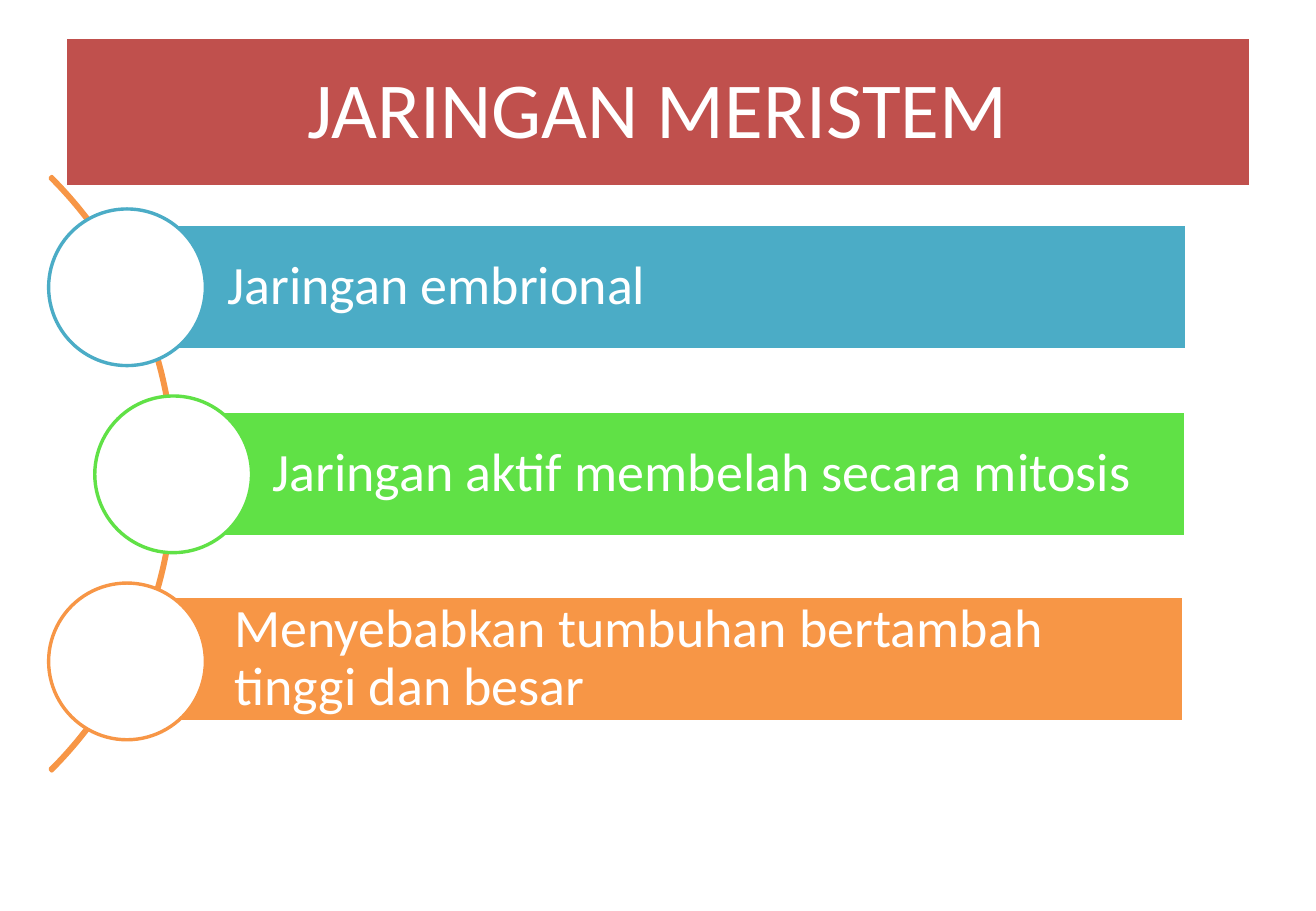
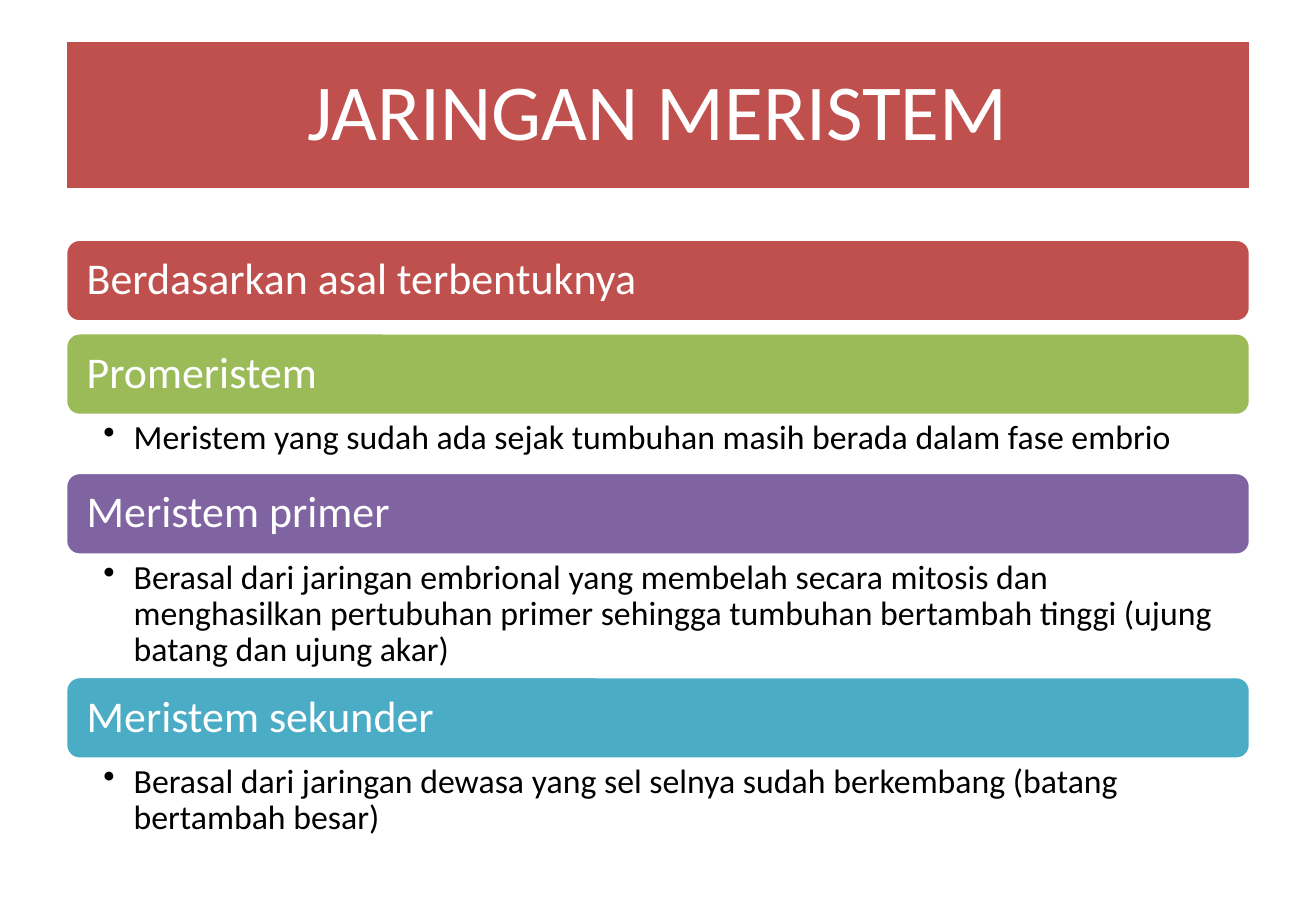
import pptx
import pptx.util
import pptx.dml.color
import pptx.enum.shapes
import pptx.enum.text
import pptx.oxml
import pptx.oxml.ns

Inches = pptx.util.Inches
Pt = pptx.util.Pt
SHAPE = pptx.enum.shapes.MSO_SHAPE
ALIGN = pptx.enum.text.PP_ALIGN
ANCHOR = pptx.enum.text.MSO_ANCHOR

COLORS = {
    "white": "FFFFFF", "black": "000000", "red": "C0504D", "teal": "4BACC6",
    "lime": "60E146", "orange": "F79646", "olive": "9BBB59", "purple": "8064A2",
}
FONT = "Calibri"
LEFT, WIDTH = 0.54, 9.75


def paint(shape, fill, line):
    """Give a shape a solid fill (or none) and a 2 pt outline."""
    if fill:
        shape.fill.solid()
        shape.fill.fore_color.rgb = pptx.dml.color.RGBColor.from_string(COLORS[fill])
    else:
        shape.fill.background()
    shape.line.color.rgb = pptx.dml.color.RGBColor.from_string(COLORS[line])
    shape.line.width = Pt(2)
    shape.shadow.inherit = False


def write(shape, text, size, insets, color="white", align=ALIGN.LEFT, anchor=ANCHOR.MIDDLE):
    """Write one paragraph; insets run left, top, right, bottom."""
    frame = shape.text_frame
    frame.word_wrap = True
    frame.auto_size = pptx.enum.text.MSO_AUTO_SIZE.NONE
    frame.vertical_anchor = anchor
    (frame.margin_left, frame.margin_top,
     frame.margin_right, frame.margin_bottom) = map(Inches, insets)
    paragraph = frame.paragraphs[0]
    paragraph.alignment = align
    paragraph.line_spacing = 0.9
    run = paragraph.add_run()
    run.text = text
    run.font.name = FONT
    run.font.size = Pt(size)
    run.font.color.rgb = pptx.dml.color.RGBColor.from_string(COLORS[color])
    return paragraph


deck = pptx.Presentation()
deck.slide_width, deck.slide_height = Inches(10.83), Inches(7.5)

# Shared title band: the title placeholder as a rounded rectangle
slides = []
for title_top in (0.31, 0.33):
    slide = deck.slides.add_slide(deck.slide_layouts[5])
    title = slide.shapes.title
    title.left, title.top = Inches(LEFT), Inches(title_top)
    title.width, title.height = Inches(WIDTH), Inches(1.23)
    title._element.spPr.append(pptx.oxml.parse_xml(
        f'<a:prstGeom {pptx.oxml.ns.nsdecls("a")} prst="roundRect"><a:avLst/></a:prstGeom>'))
    paint(title, "red", "white")
    write(title, "JARINGAN MERISTEM", 47, (0.26,) * 4, align=ALIGN.CENTER)
    slides.append(slide)
traits_slide, origins_slide = slides

# Slide 1: arc behind three traits
arc = traits_slide.shapes.add_shape(
    SHAPE.BLOCK_ARC, Inches(-5.48), Inches(0.44), Inches(6.92), Inches(6.92))
for index, value in enumerate((189, 27, 0.003)):
    arc.adjustments[index] = value
paint(arc, None, "orange")

# Text, colour, circle left, bar left, bar top, bar right
traits = [
    ("Jaringan embrional", "teal", 0.4, 1.05, 1.85, 9.77),
    ("Jaringan aktif membelah secara mitosis", "lime", 0.78, 1.42, 3.39, 9.76),
    ("Menyebabkan tumbuhan bertambah tinggi dan besar", "orange", 0.4, 1.11, 4.91, 9.74),
]
for row, (text, color, circle_left, bar_left, bar_top, bar_right) in enumerate(traits):
    bar = traits_slide.shapes.add_shape(
        SHAPE.RECTANGLE, Inches(bar_left), Inches(bar_top),
        Inches(bar_right - bar_left), Inches(1.03))
    paint(bar, color, "white")
    write(bar, text, 32, (0.82, 0.09, 0.09, 0.09))
    circle = traits_slide.shapes.add_shape(
        SHAPE.OVAL, Inches(circle_left), Inches(1.72 + row * 1.54), Inches(1.29), Inches(1.29))
    paint(circle, "white", color)

# Slide 2: headings stacked with their details
HEADING_HEIGHT, GAP = 0.68, 0.09
origins = [
    ("Berdasarkan asal terbentuknya", "red", None, GAP),
    ("Promeristem", "olive",
     "Meristem yang sudah ada sejak tumbuhan masih berada dalam fase embrio", 0.47),
    ("Meristem primer", "purple",
     "Berasal dari jaringan embrional yang membelah secara mitosis dan menghasilkan "
     "pertubuhan primer sehingga tumbuhan bertambah tinggi (ujung batang dan ujung akar)", 1),
    ("Meristem sekunder", "teal",
     "Berasal dari jaringan dewasa yang sel selnya sudah berkembang "
     "(batang bertambah besar)", 0.69),
]
top = 1.97
for name, color, detail, space_below in origins:
    heading = origins_slide.shapes.add_shape(
        SHAPE.ROUNDED_RECTANGLE, Inches(LEFT), Inches(top), Inches(WIDTH), Inches(HEADING_HEIGHT))
    paint(heading, color, "white")
    write(heading, name, 26, (0.14,) * 4)
    top += HEADING_HEIGHT
    if detail:
        detail_box = origins_slide.shapes.add_textbox(
            Inches(LEFT), Inches(top), Inches(WIDTH), Inches(space_below))
        paragraph = write(detail_box, detail, 20, (0.31, 0.04, 0.2, 0.04),
                          color="black", anchor=ANCHOR.TOP)
        properties = paragraph._p.get_or_add_pPr()
        properties.set("marL", str(Inches(0.25)))
        properties.set("indent", str(Inches(-0.25)))
        properties.append(pptx.oxml.parse_xml(
            f'<a:buChar {pptx.oxml.ns.nsdecls("a")} char="•"/>'))
    top += space_below

deck.save("out.pptx")
